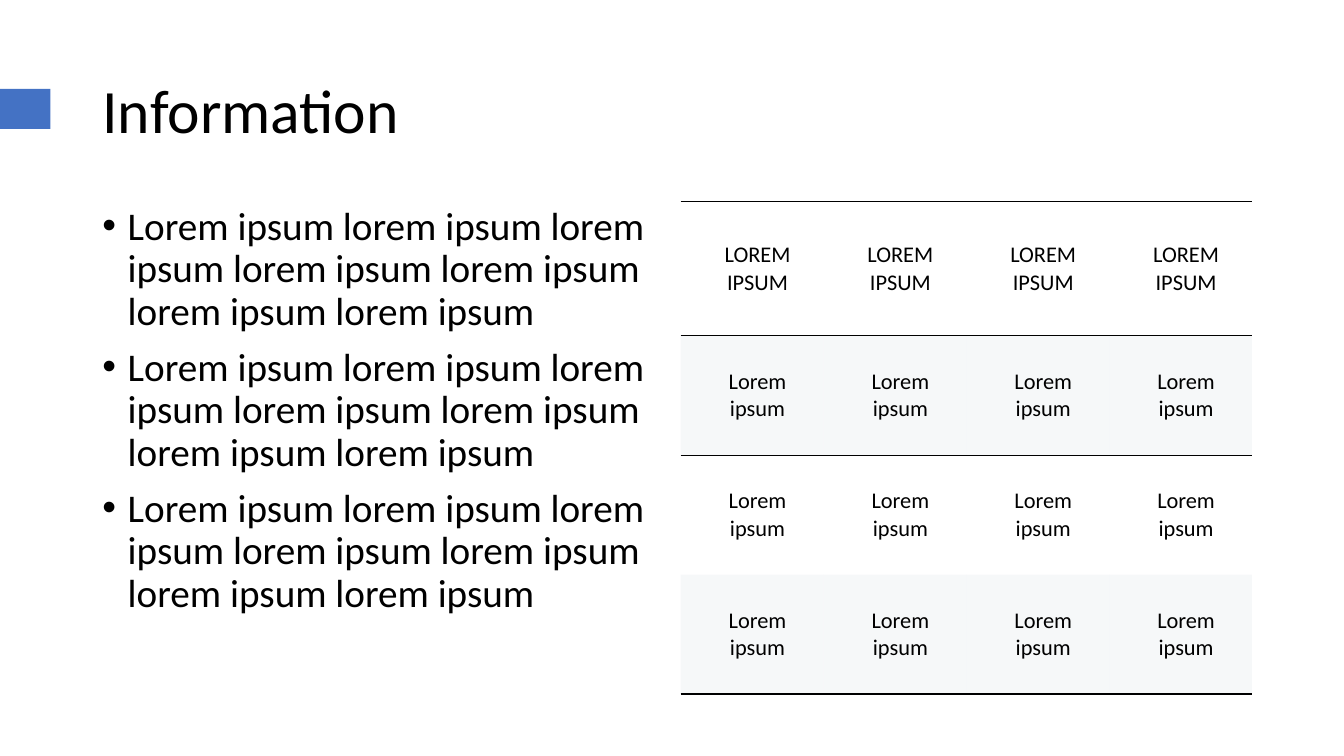
"""Build the Information slide: a title, three bullets and a ruled table."""
from dataclasses import dataclass

from lxml import etree
from pptx import Presentation
from pptx.dml.color import RGBColor
from pptx.enum.shapes import MSO_SHAPE
from pptx.enum.text import MSO_ANCHOR, MSO_AUTO_SIZE, PP_ALIGN
from pptx.oxml.ns import qn
from pptx.util import Cm, Pt

RECTANGLE = MSO_SHAPE.RECTANGLE
MIDDLE, TOP = MSO_ANCHOR.MIDDLE, MSO_ANCHOR.TOP
LEFT, CENTER = PP_ALIGN.LEFT, PP_ALIGN.CENTER
NO_AUTOFIT = MSO_AUTO_SIZE.NONE

FONT = "Calibri"
BLACK, ACCENT, BAND = "000000", "4472C4", "D6DCE5"
BAND_OPACITY = 20
PLAIN_TABLE_STYLE = "{2D5ABB26-0587-4C30-8999-92F81FD0307C}"
COLUMN_COUNT, COLUMN_WIDTH = 4, 3.6
BULLET_COUNT = 3
BULLET_TEXT = " ".join(["Lorem ipsum"] + ["lorem ipsum"] * 6)


@dataclass(frozen=True)
class Area:
    """Hold a place on the slide in centimetres."""
    left: float
    top: float
    width: float
    height: float

    def lengths(self):
        """Return left, top, width and height as slide lengths."""
        return [Cm(value) for value in (self.left, self.top, self.width, self.height)]


@dataclass(frozen=True)
class TableRow:
    """Describe a table row whose cells share text, rules and shading."""
    text: str
    height: float
    rules: tuple[str, ...] = ()
    banded: bool = False


MARKER_AREA = Area(0, 2.24, 1.27, 1.01)
TITLE_AREA = Area(2.33, 1.01, 29.21, 3.68)
BULLETS_AREA = Area(2.33, 5.08, 14.4, 12.09)
ROWS = (
    TableRow("LOREM IPSUM", 3.38, rules=("lnT", "lnB")),
    TableRow("Lorem ipsum", 3.01, rules=("lnT",), banded=True),
    TableRow("Lorem ipsum", 3.01),
    TableRow("Lorem ipsum", 3.01, rules=("lnB",), banded=True),
)
TABLE_AREA = Area(17.15, 5.08, COLUMN_COUNT * COLUMN_WIDTH, sum(row.height for row in ROWS))


def color(value: str) -> RGBColor:
    """Turn a hex string into a colour."""
    return RGBColor.from_string(value)


def apply_format(target, values: dict) -> None:
    """Set each attribute of the target from a dict."""
    for name, value in values.items():
        setattr(target, name, value)


def format_font(para, size: float) -> None:
    """Give a paragraph the slide font in black."""
    apply_format(para.font, {"name": FONT, "size": Pt(size), "bold": False})
    para.font.color.rgb = color(BLACK)


def add_marker(slide) -> None:
    """Draw the accent block at the left edge."""
    marker = slide.shapes.add_shape(RECTANGLE, *MARKER_AREA.lengths())
    marker.shadow.inherit = False
    marker.fill.solid()
    marker.fill.fore_color.rgb = color(ACCENT)
    marker.line.fill.background()


def add_title(slide, text: str) -> None:
    """Place and format the title placeholder."""
    title = slide.shapes.title
    places = ("left", "top", "width", "height")
    apply_format(title, dict(zip(places, TITLE_AREA.lengths())))
    frame = title.text_frame
    frame.text = text
    apply_format(frame, {"vertical_anchor": MIDDLE, "auto_size": NO_AUTOFIT, "word_wrap": True})
    para = frame.paragraphs[0]
    apply_format(para, {"alignment": LEFT, "line_spacing": 0.9})
    format_font(para, 44)


def add_bullets(slide) -> None:
    """Write the bulleted paragraphs."""
    frame = slide.shapes.add_textbox(*BULLETS_AREA.lengths()).text_frame
    apply_format(frame, {"vertical_anchor": TOP, "auto_size": NO_AUTOFIT, "word_wrap": True})
    frame.text = "\n".join([BULLET_TEXT] * BULLET_COUNT)
    for index, para in enumerate(frame.paragraphs):
        apply_format(para, {"line_spacing": 0.9, "space_before": Pt(10 if index else 0)})
        properties = para._p.get_or_add_pPr()
        apply_indent = {"marL": Cm(0.64), "indent": -Cm(0.64)}
        for name, value in apply_indent.items():
            properties.set(name, str(value))
        etree.SubElement(properties, qn("a:buFont"), typeface="Arial")
        etree.SubElement(properties, qn("a:buChar"), char="•")
        format_font(para, 28)


def add_rule(cell, side: str) -> None:
    """Add a thin black border to one side of a cell."""
    line = etree.SubElement(cell._tc.get_or_add_tcPr(), qn(f"a:{side}"), w=str(Pt(1)))
    fill = etree.SubElement(line, qn("a:solidFill"))
    etree.SubElement(fill, qn("a:srgbClr"), val=BLACK)


def fill_cell(cell, row: TableRow) -> None:
    """Write and format one table cell."""
    cell.text = row.text
    apply_format(cell, {
        "vertical_anchor": MIDDLE,
        "margin_left": Cm(0.71),
        "margin_top": Cm(0.56),
        "margin_right": Cm(0.43),
        "margin_bottom": Cm(0.56),
    })
    para = cell.text_frame.paragraphs[0]
    para.alignment = CENTER
    format_font(para, 16)
    for side in row.rules:
        add_rule(cell, side)
    if row.banded:
        cell.fill.solid()
        cell.fill.fore_color.rgb = color(BAND)
        shade = cell._tc.tcPr.find(qn("a:solidFill")).find(qn("a:srgbClr"))
        etree.SubElement(shade, qn("a:alpha"), val=str(BAND_OPACITY * 1000))
    else:
        cell.fill.background()


def add_information_table(slide) -> None:
    """Draw the ruled table."""
    frame = slide.shapes.add_table(len(ROWS), COLUMN_COUNT, *TABLE_AREA.lengths())
    table = frame.table
    table.horz_banding = False
    table._tbl.tblPr.find(qn("a:tableStyleId")).text = PLAIN_TABLE_STYLE
    for column in table.columns:
        column.width = Cm(COLUMN_WIDTH)
    for row, table_row in zip(ROWS, table.rows):
        table_row.height = Cm(row.height)
        for cell in table_row.cells:
            fill_cell(cell, row)


def main() -> None:
    """Build and save the deck."""
    deck = Presentation()
    apply_format(deck, {"slide_width": Cm(33.87), "slide_height": Cm(19.05)})
    slide = deck.slides.add_slide(deck.slide_layouts.get_by_name("Title Only"))
    add_marker(slide)
    add_title(slide, "Information")
    add_bullets(slide)
    add_information_table(slide)
    deck.save("out.pptx")


if __name__ == "__main__":
    main()
